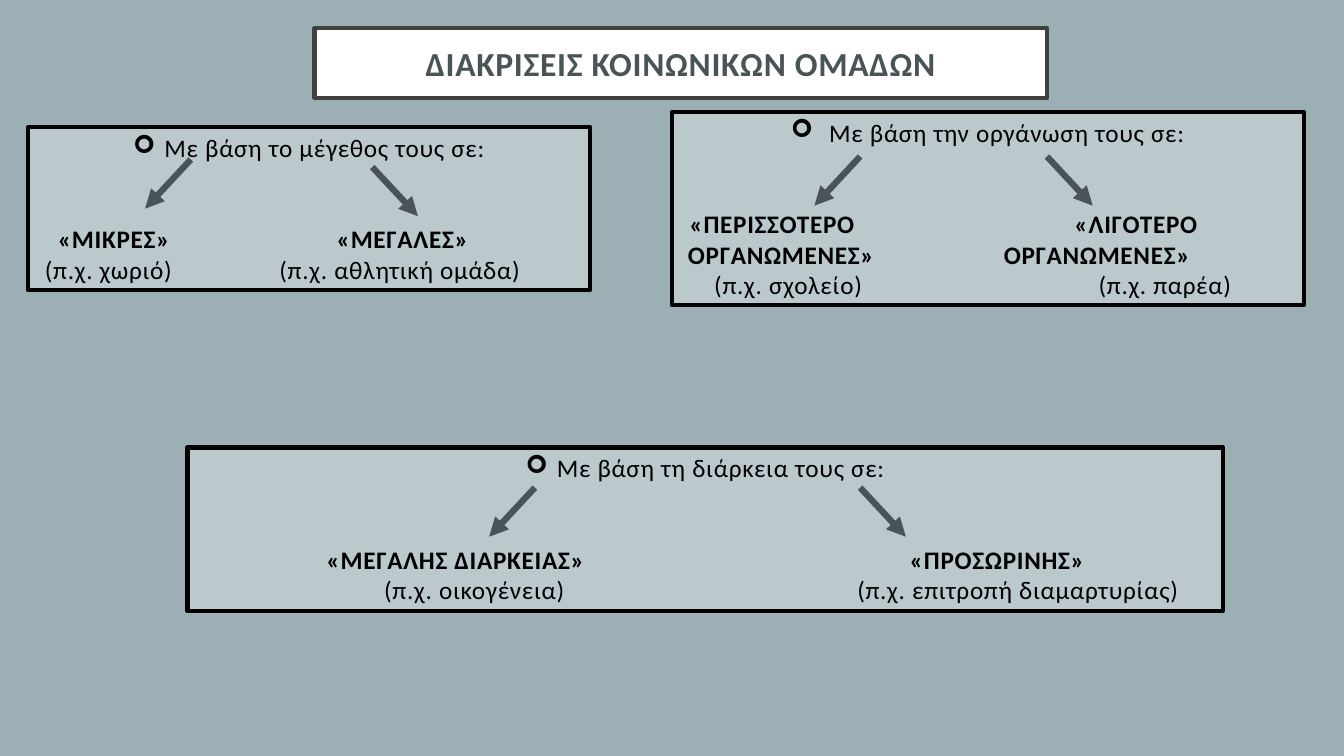
from pptx import Presentation
from pptx.dml.color import RGBColor
from pptx.enum.shapes import MSO_CONNECTOR, MSO_SHAPE
from pptx.enum.text import MSO_ANCHOR, PP_ALIGN
from pptx.oxml.ns import qn
from pptx.util import Inches, Pt
from lxml import etree

RECT, LINE = MSO_SHAPE.RECTANGLE, MSO_CONNECTOR.STRAIGHT
TOP, MIDDLE = MSO_ANCHOR.TOP, MSO_ANCHOR.MIDDLE
LEFT, CENTER = PP_ALIGN.LEFT, PP_ALIGN.CENTER

theme = {
    "back": RGBColor.from_string("9BAFB5"),
    "white": RGBColor.from_string("FFFFFF"),
    "frame": RGBColor.from_string("404040"),
    "slate": RGBColor.from_string("4A5356"),
    "black": RGBColor.from_string("000000"),
    "panel": [RGBColor.from_string("BBC8CC"), RGBColor.from_string("B8C6CB")],
    "font": "Calibri", "head": Pt(24), "body": Pt(18),
    "edge": Pt(3), "arrow": Pt(4.5), "gap": Pt(44), "space": "50",
}

deck = Presentation()
deck.slide_width, deck.slide_height = Inches(13.33), Inches(7.5)
col, row = deck.slide_width / 100, deck.slide_height / 100
slide = deck.slides.add_slide(deck.slide_layouts[6])
slide.background.fill.solid()
slide.background.fill.fore_color.rgb = theme["back"]


def add_box(x, y, wide, high, edge, anchor):
    box = slide.shapes.add_shape(
        RECT, int(x * col), int(y * row), int(wide * col), int(high * row))
    box.shadow.inherit = False
    box.line.color.rgb = edge
    box.line.width = theme["edge"]
    box.text_frame.word_wrap = True
    box.text_frame.vertical_anchor = anchor
    return box


def set_text(para, text, size, color, bold, align):
    para.text = text
    para.alignment = align
    para.font.name, para.font.size = theme["font"], size
    para.font.color.rgb, para.font.bold = color, bold
    para._p.pPr.find(qn("a:defRPr")).set("spc", theme["space"])


title = add_box(23.4, 3.73, 54.5, 9.2, theme["frame"], MIDDLE)
title.fill.solid()
title.fill.fore_color.rgb = theme["white"]
set_text(title.text_frame.paragraphs[0], "ΔΙΑΚΡΙΣΕΙΣ ΚΟΙΝΩΝΙΚΩΝ ΟΜΑΔΩΝ",
         theme["head"], theme["slate"], True, CENTER)

panels = [
    ((2.1, 16.8, 41.8, 21.6), "Με βάση το μέγεθος τους σε:", 0.31, [
        (True, 1.46, "«ΜΙΚΡΕΣ»", 22.2, "«ΜΕΓΑΛΕΣ»"),
        (False, 0.5, "(π.χ. χωριό)", 17.95, "(π.χ. αθλητική ομάδα)"),
    ], [(14.2, 21.1, -1), (27.7, 22.1, 1)]),
    ((50, 14.8, 47, 25.6), "Με βάση την οργάνωση τους σε:", 0.38, [
        (True, 0.55, "«ΠΕΡΙΣΣΟΤΕΡΟ", 29.2, "«ΛΙΓΟΤΕΡΟ"),
        (True, 0.45, "ΟΡΓΑΝΩΜΕΝΕΣ»", 23.95, "ΟΡΓΑΝΩΜΕΝΕΣ»"),
        (False, 2.4, "(π.χ. σχολείο)", 31, "(π.χ. παρέα)"),
    ], [(64, 20.7, -1), (77.9, 20.7, 1)]),
    ((13.95, 59.2, 77.05, 21.6), "Με βάση τη διάρκεια τους σε:", 0.31, [
        (True, 9.6, "«ΜΕΓΑΛΗΣ ΔΙΑΡΚΕΙΑΣ»", 53, "«ΠΡΟΣΩΡΙΝΗΣ»"),
        (False, 13.9, "(π.χ. οικογένεια)", 49.1, "(π.χ. επιτροπή διαμαρτυρίας)"),
    ], [(39.8, 64.5, -1), (64, 64.5, 1)]),
]

for place, head, indent, lines, arrows in panels:
    box = add_box(*place, theme["black"], TOP)
    box.fill.gradient()
    box.fill.gradient_angle = 270
    for stop, shade in zip(box.fill.gradient_stops, theme["panel"]):
        stop.color.rgb = shade

    para = box.text_frame.paragraphs[0]
    props = para._p.get_or_add_pPr()
    props.set("marL", str(Inches(indent)))
    props.set("indent", str(-Inches(indent)))
    etree.SubElement(props, qn("a:buFont"), typeface="Wingdings")
    etree.SubElement(props, qn("a:buChar"), char="➢")
    set_text(para, head, theme["body"], theme["black"], False, CENTER)

    for rank, (bold, near, first, far, second) in enumerate(lines):
        para = box.text_frame.add_paragraph()
        tabs = etree.SubElement(para._p.get_or_add_pPr(), qn("a:tabLst"))
        for spot in (near, far):
            etree.SubElement(tabs, qn("a:tab"), pos=str(int(spot * col)), algn="l")
        if rank == 0:
            para.space_before = theme["gap"]
        set_text(para, f"\t{first}\t{second}", theme["body"], theme["black"], bold, LEFT)

    for x, y, side in arrows:
        arrow = slide.shapes.add_connector(
            LINE, int(x * col), int(y * row),
            int((x + side * 3.4) * col), int((y + 6.5) * row))
        arrow.line.color.rgb = theme["slate"]
        arrow.line.width = theme["arrow"]
        etree.SubElement(arrow.line._get_or_add_ln(), qn("a:tailEnd"), type="triangle")
        etree.SubElement(arrow._element.spPr, qn("a:effectLst"))

deck.save("out.pptx")
